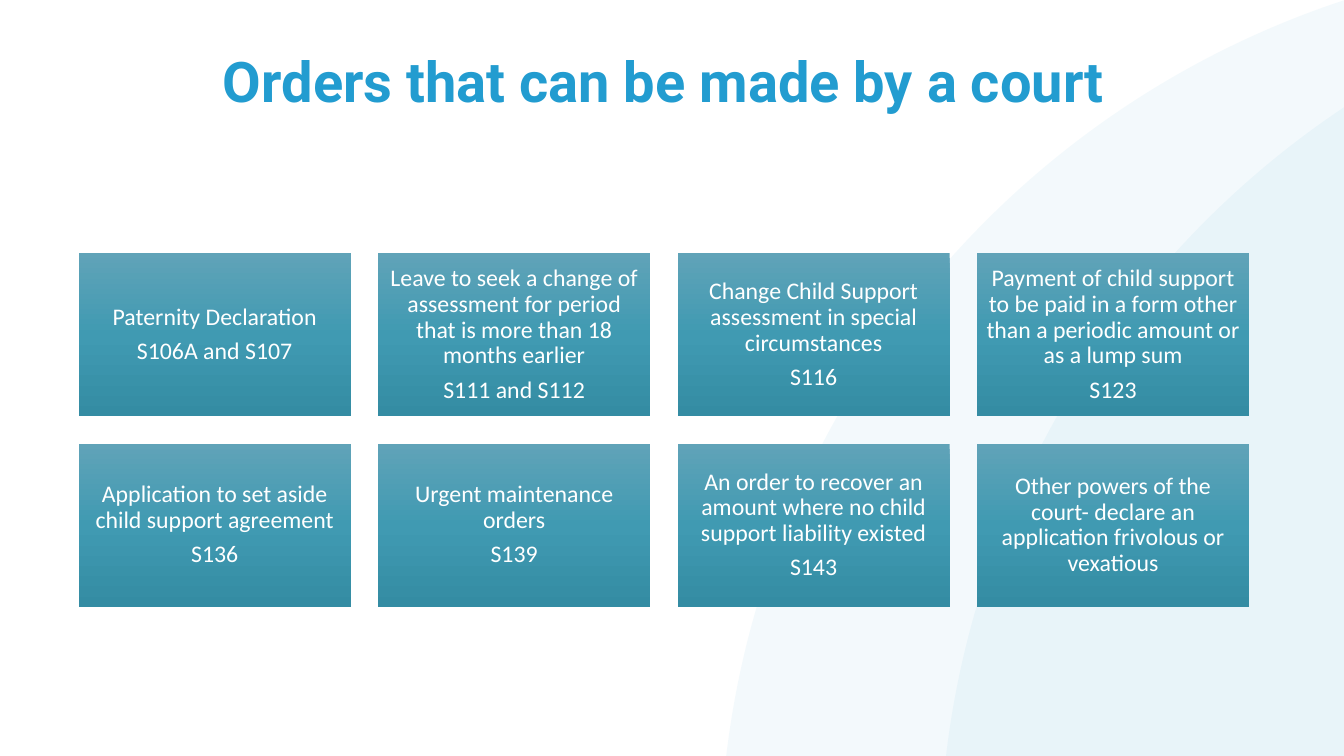
"""Build a slide with a grid of the orders a court can make."""
from copy import deepcopy

from lxml.etree import SubElement
from pptx import Presentation
from pptx.dml.color import RGBColor
from pptx.enum.shapes import MSO_SHAPE as Shape
from pptx.enum.text import MSO_ANCHOR as Anchor, PP_ALIGN as Align
from pptx.oxml.ns import qn
from pptx.util import Inches, Pt

COLORS = {
    "accent": "229CD0",
    "text": "FFFFFF",
    "card_top": "60A3B8",
    "card_middle": "409AB2",
    "card_bottom": "348CA3",
}
ORDERS = [
    ("Paternity Declaration", "S106A and S107"),
    ("Leave to seek a change of assessment for period that is more than 18 months earlier",
     "S111 and S112"),
    ("Change Child Support assessment in special circumstances", "S116"),
    ("Payment of child support to be paid in a form other than a periodic amount or as a lump sum",
     "S123"),
    ("Application to set aside child support agreement", "S136"),
    ("Urgent maintenance orders", "S139"),
    ("An order to recover an amount where no child support liability existed", "S143"),
    ("Other powers of the court- declare an application frivolous or vexatious",),
]
COLUMNS = 4
GRID_LEFT, GRID_TOP = 0.78, 2.51
CARD_WIDTH, CARD_HEIGHT, GAP = 2.7, 1.62, 0.27


def color(name):
    return RGBColor.from_string(COLORS[name])


def add_text(frame, text, index, size, font_name, color_name):
    para = frame.paragraphs[0] if index == 0 else frame.add_paragraph()
    para.alignment = Align.CENTER
    para.line_spacing = 0.9
    span = para.add_run()
    span.text = text
    span.font.size = Pt(size)
    span.font.name = font_name
    span.font.color.rgb = color(color_name)
    return para


deck = Presentation()
deck.slide_width, deck.slide_height = Inches(13.33), Inches(7.5)
page = deck.slides.add_slide(deck.slide_layouts[5])

for position, left in enumerate((7.14, 9.32)):
    circle = page.shapes.add_shape(
        Shape.OVAL, Inches(left), Inches(-0.45), Inches(18.02), Inches(18.02))
    circle.shadow.inherit = False
    circle.line.fill.background()
    circle.fill.solid()
    circle.fill.fore_color.rgb = color("accent")
    tint = circle.fill._xPr.find(".//" + qn("a:srgbClr"))
    SubElement(tint, qn("a:alpha"), val="5000")
    page.shapes._spTree.insert(2 + position, circle._element)

title = page.shapes.title
title.left, title.top = Inches(0.77), Inches(0.49)
title.width, title.height = Inches(11.62), Inches(0.97)
title.text_frame.vertical_anchor = Anchor.TOP
heading = add_text(title.text_frame, "Orders that can be made by a court", 0, 40, "Roboto", "accent")
heading.runs[0].font.bold = True

for number, lines in enumerate(ORDERS):
    row, column = divmod(number, COLUMNS)
    card = page.shapes.add_shape(
        Shape.RECTANGLE,
        Inches(GRID_LEFT + column * (CARD_WIDTH + GAP)),
        Inches(GRID_TOP + row * (CARD_HEIGHT + GAP)),
        Inches(CARD_WIDTH), Inches(CARD_HEIGHT))
    card.shadow.inherit = False
    card.line.fill.background()
    card.fill.gradient()
    card.fill.gradient_angle = 270
    stop_list = card._element.spPr.find(".//" + qn("a:gsLst"))
    stop_list.insert(1, deepcopy(stop_list[0]))
    for stop, place, shade in zip(
            card.fill.gradient_stops, (0, 0.5, 1), ("card_top", "card_middle", "card_bottom")):
        stop.position = place
        stop.color.rgb = color(shade)

    frame = card.text_frame
    frame.word_wrap = True
    frame.vertical_anchor = Anchor.MIDDLE
    frame.margin_left = frame.margin_right = Inches(0.07)
    frame.margin_top = frame.margin_bottom = Inches(0.07)
    for index, line in enumerate(lines):
        para = add_text(frame, line, index, 17, "Calibri", "text")
        para.space_after = Pt(6)

deck.save("out.pptx")
